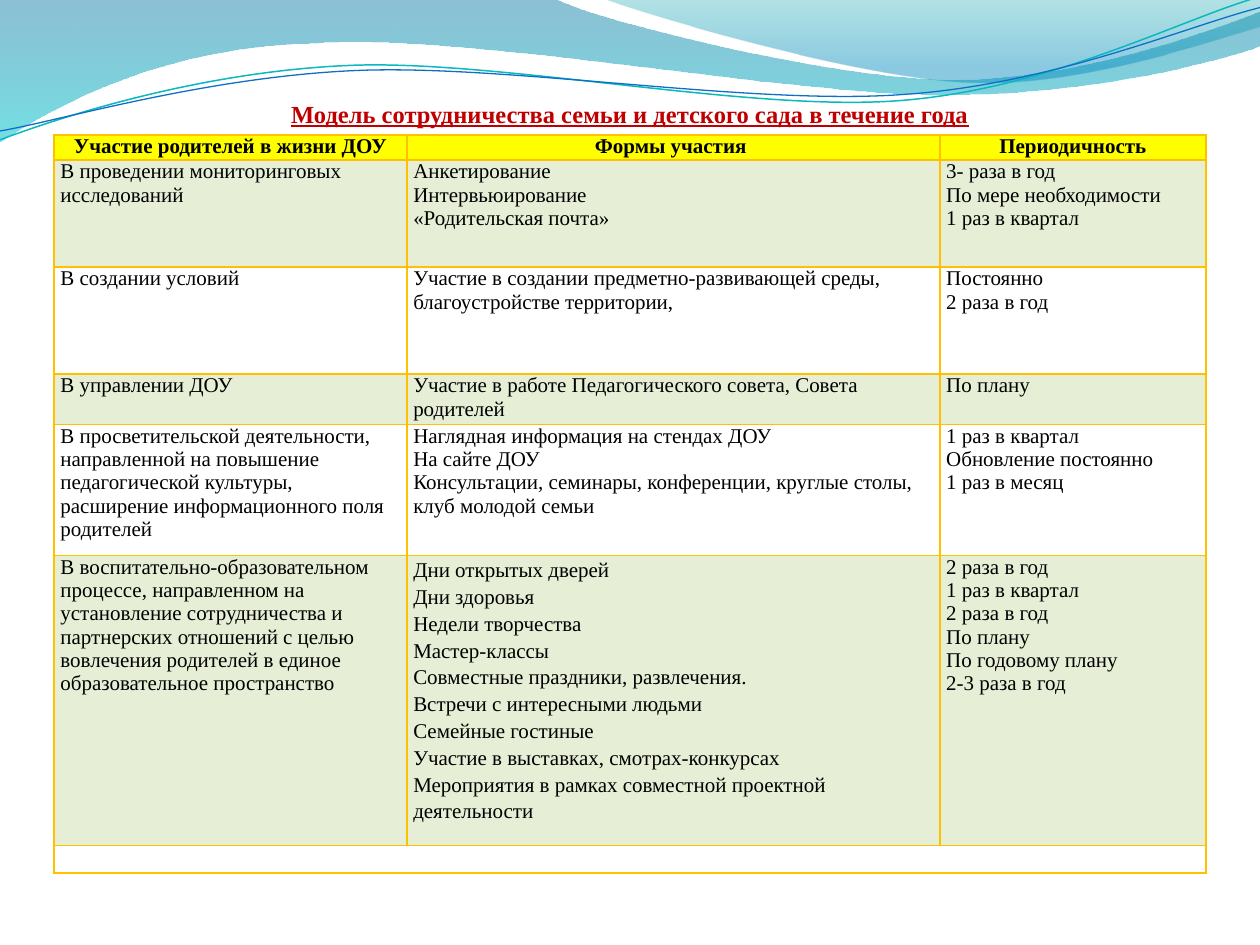
from lxml import etree
from pptx import Presentation
from pptx import util as u
from pptx.dml.color import RGBColor
from pptx.enum import text
from pptx.oxml.ns import qn

THEME = dict(font="Times New Roman", title_size=14, cell_size=12, title="C00000", text="000000",
             header="FFFF00", band="E6EED5", border="FFC000")

TITLE = "Модель сотрудничества семьи и детского сада в течение года"
HEADER = ["Участие родителей в жизни ДОУ", "Формы участия ", "Периодичность"]
ROWS = [
    ["В проведении мониторинговых исследований",
     "Анкетирование\nИнтервьюирование\n«Родительская почта»",
     "3- раза в год\nПо мере необходимости\n1 раз в квартал"],
    ["В создании условий",
     "Участие в создании предметно-развивающей среды,\nблагоустройстве территории,",
     "Постоянно\n2 раза в год"],
    ["В управлении ДОУ",
     "Участие в работе Педагогического совета, Совета родителей",
     "По плану"],
    ["В просветительской деятельности, направленной на повышение педагогической культуры, "
     "расширение информационного поля родителей",
     "Наглядная информация на стендах ДОУ\nНа сайте ДОУ\n"
     "Консультации, семинары, конференции, круглые столы, клуб молодой семьи",
     "1 раз в квартал\nОбновление постоянно\n1 раз в месяц"],
    ["В воспитательно-образовательном процессе, направленном на установление сотрудничества и "
     "партнерских отношений с целью вовлечения родителей в единое образовательное пространство",
     "Дни открытых дверей\nДни здоровья\nНедели творчества\nМастер-классы\n"
     "Совместные праздники, развлечения.\nВстречи с интересными людьми\nСемейные гостиные\n"
     "Участие в выставках, смотрах-конкурсах\n"
     "Мероприятия в рамках совместной проектной деятельности",
     "2 раза в год\n1 раз в квартал\n2 раза в год\nПо плану\nПо годовому плану\n2-3 раза в год"],
    ["", "", ""],
]
COLS = [2.8, 4.23, 2.11]
HEIGHTS = [0.2, 0.85, 0.85, 0.4, 1.04, 2.3, 0.22]
SPACED_CELL = (5, 1)

BANDS = [
    ([(0, 0), (4.4, -0.01), (4.76, 0.17, 6.64, 0.63, 7.58, 0.63), (8.53, 0.63, 9.58, 0.26, 10, 0.09),
      (10.01, 0.36), (9.83, 0.44, 8.7, 0.76, 7.46, 0.75), (6.22, 0.75, 3.82, 0.28, 2.57, 0.34),
      (1.29, 0.36, 0.46, 0.83, -0.01, 1.13)],
     [(0, "0074A1", 45), (1, "00C6CF", 55)]),
    ([(4.79, -0.01), (5.09, 0.11, 6.82, 0.62, 7.69, 0.65), (8.56, 0.69, 9.61, 0.32, 10, 0.21), (10, 0)],
     [(0, "00A1A9", 30), (0.8, "008BBF", 45)]),
]
WAVES = [
    ([(0, 1.11), (0.48, 0.93, 1.58, 0.57, 2.77, 0.52), (3.95, 0.47, 5.93, 0.89, 7.13, 0.8),
      (8.33, 0.71, 9.38, 0.15, 9.98, -0.02)], "0AB8BF", 0.85),
    ([(0, 1.04), (0.47, 0.96, 1.64, 0.61, 2.83, 0.56), (4.03, 0.51, 5.97, 0.84, 7.17, 0.75),
      (8.36, 0.67, 9.41, 0.21, 10, 0.06)], "0F6FC6", 0.75),
]


def rgb(value):
    return RGBColor.from_string(value)


def add_path(s, path, close):
    ends = [(u.Inches(seg[-2]), u.Inches(seg[-1])) for seg in path]
    builder = s.shapes.build_freeform(*ends[0])
    builder.add_line_segments(ends[1:], close=close)
    sp = builder.convert_to_shape()
    sp.shadow.inherit = False
    for line, seg in zip(list(sp.element.iter(qn("a:lnTo"))), path[1:]):
        if len(seg) == 6:
            curve = etree.Element(qn("a:cubicBezTo"))
            for x, y in zip(seg[::2], seg[1::2]):
                etree.SubElement(curve, qn("a:pt"), x=str(u.Inches(x) - sp.left),
                                 y=str(u.Inches(y) - sp.top))
            line.getparent().replace(line, curve)
    return sp


def add_band(s, path, stops):
    sp = add_path(s, path, True)
    sp.line.fill.background()
    sp.fill.gradient()
    sp.fill.gradient_angle = 270
    for stop, (position, color, _) in zip(sp.fill.gradient_stops, stops):
        stop.position = position
        stop.color.rgb = rgb(color)
    for clr, (_, _, alpha) in zip(sp.element.iter(qn("a:srgbClr")), stops):
        etree.SubElement(clr, qn("a:alpha"), val=str(alpha * 1000))


def add_wave(s, path, color, width):
    sp = add_path(s, path, False)
    sp.fill.background()
    sp.line.color.rgb = rgb(color)
    sp.line.width = u.Pt(width)


def style_run(r, size, color, bold):
    r.font.name = THEME["font"]
    r.font.size = u.Pt(size)
    r.font.color.rgb = rgb(color)
    r.font.bold = bold


def add_title(s):
    sp = s.shapes.title
    sp.left, sp.top, sp.width, sp.height = map(u.Inches, (0.2, 0.73, 9.6, 0.34))
    tf = sp.text_frame
    tf.text = TITLE
    tf.word_wrap = True
    tf.vertical_anchor = text.MSO_ANCHOR.MIDDLE
    p = tf.paragraphs[0]
    p.alignment = text.PP_ALIGN.CENTER
    style_run(p.runs[0], THEME["title_size"], THEME["title"], True)
    p.runs[0].font.underline = True


def add_borders(cell):
    tc_pr = cell._tc.get_or_add_tcPr()
    for i, side in enumerate(("lnL", "lnR", "lnT", "lnB")):
        ln = etree.Element(qn(f"a:{side}"), w=str(u.Pt(1)))
        fill = etree.SubElement(ln, qn("a:solidFill"))
        etree.SubElement(fill, qn("a:srgbClr"), val=THEME["border"])
        tc_pr.insert(i, ln)


def fill_cell(cell, content, row, spacing):
    cell.margin_left = cell.margin_right = u.Inches(0.05)
    cell.margin_top = cell.margin_bottom = 0
    cell.text_frame.text = content
    for p in cell.text_frame.paragraphs:
        p.alignment = text.PP_ALIGN.CENTER if row == 0 else text.PP_ALIGN.LEFT
        p.line_spacing = spacing
        for r in p.runs:
            style_run(r, THEME["cell_size"], THEME["text"], row == 0)
        if not p.runs:
            etree.SubElement(p._p, qn("a:endParaRPr"), sz=str(THEME["cell_size"] * 100))
    if row % 2 or row == 0:
        cell.fill.solid()
        cell.fill.fore_color.rgb = rgb(THEME["band"] if row else THEME["header"])
    else:
        cell.fill.background()
    add_borders(cell)


def add_model_table(s):
    rows = [HEADER] + ROWS
    frame = s.shapes.add_table(len(rows), len(COLS), u.Inches(0.43), u.Inches(1.07),
                               u.Inches(sum(COLS)), u.Inches(sum(HEIGHTS)))
    table = frame.table
    table.first_row = table.horz_banding = False
    for column, width in zip(table.columns, COLS):
        column.width = u.Inches(width)
    for i, (row, height) in enumerate(zip(rows, HEIGHTS)):
        table.rows[i].height = u.Inches(height)
        for j, content in enumerate(row):
            fill_cell(table.cell(i, j), content, i, 1.15 if (i, j) == SPACED_CELL else None)
    last = len(rows) - 1
    table.cell(last, 0).merge(table.cell(last, len(COLS) - 1))


def main():
    prs = Presentation()
    prs.slide_width, prs.slide_height = u.Inches(10), u.Inches(7.5)
    s = prs.slides.add_slide(prs.slide_layouts[5])
    for band in BANDS:
        add_band(s, *band)
    for wave in WAVES:
        add_wave(s, *wave)
    add_title(s)
    add_model_table(s)
    prs.save("out.pptx")


if __name__ == "__main__":
    main()
